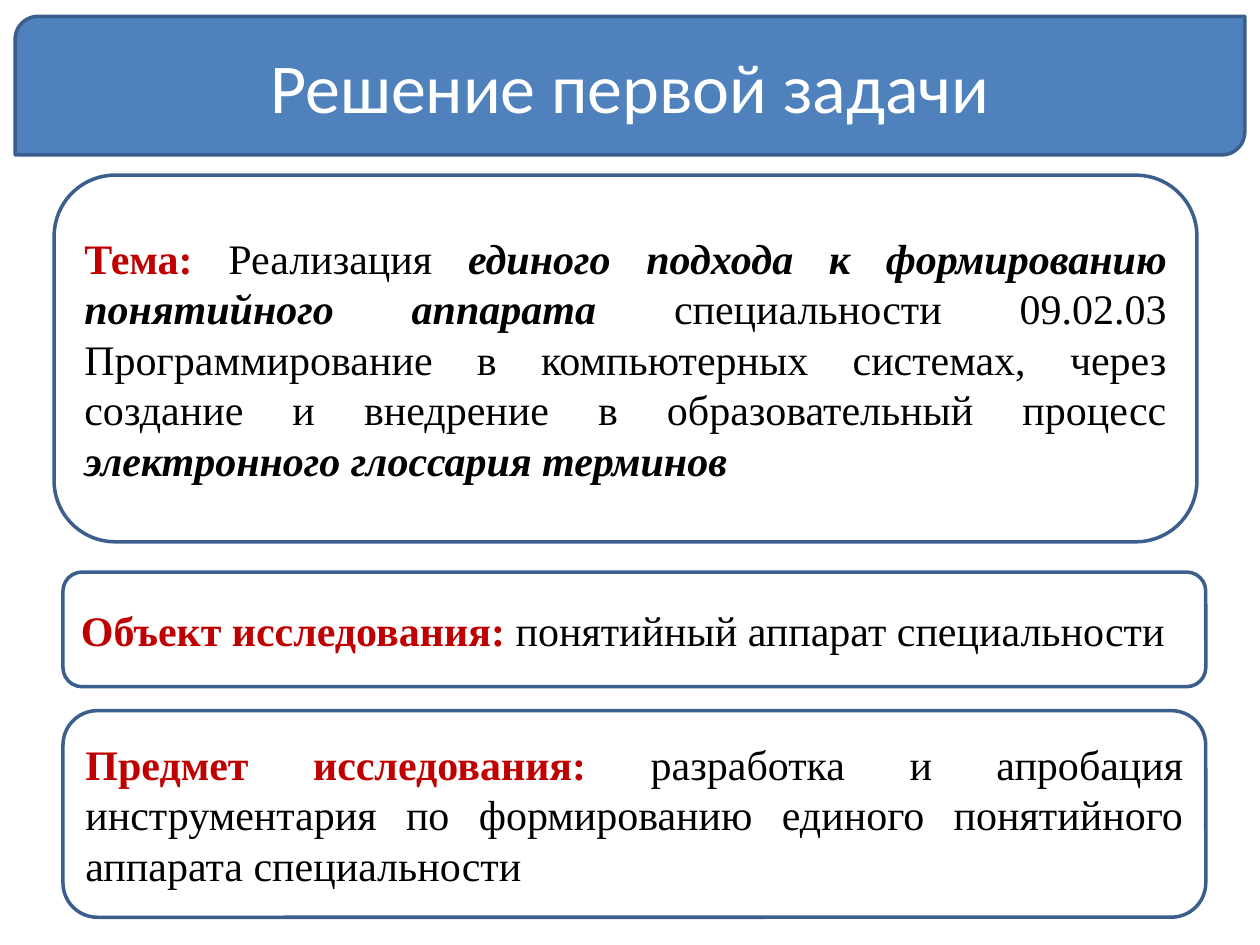
from pptx import Presentation
from pptx import util as u
from pptx.dml.color import RGBColor
from pptx.enum import shapes, text

RED, BLACK, WHITE = "C00000", "000000", "FFFFFF"
BLUE, EDGE = "4F81BD", "3A5F8C"
KIND = shapes.MSO_SHAPE


def paint(target, color):
    """Give a fill or font a solid colour."""
    if hasattr(target, "solid"):
        target.solid()
        target.fore_color.rgb = RGBColor.from_string(color)
    else:
        target.color.rgb = RGBColor.from_string(color)


def add_box(slide, kind, box, align, fill=None):
    """Add an outlined shape and return its first paragraph."""
    shape = slide.shapes.add_shape(kind, *map(u.Inches, box))
    shape.shadow.inherit = False
    if fill:
        paint(shape.fill, fill)
    else:
        shape.fill.background()
    paint(shape.line.fill, EDGE)
    shape.line.width = u.Pt(2)
    frame = shape.text_frame
    frame.word_wrap = True
    frame.vertical_anchor = text.MSO_ANCHOR.MIDDLE
    para = frame.paragraphs[0]
    para.alignment = align
    return para


def add_title(slide, box, title):
    para = add_box(slide, KIND.ROUND_2_DIAG_RECTANGLE, box,
                   text.PP_ALIGN.CENTER, BLUE)
    para.text = title
    para.font.name = "Calibri"
    para.font.size = u.Pt(40)
    paint(para.font, WHITE)


def add_card(slide, box, label, parts):
    """Add a red label, then (words, stressed) parts in black."""
    para = add_box(slide, KIND.ROUNDED_RECTANGLE, box, text.PP_ALIGN.JUSTIFY)
    para.font.name = "Times New Roman"
    para.font.size = u.Pt(24)
    runs = [(label + " ", RED, True, False)]
    runs += [(words, BLACK, strong, strong) for words, strong in parts]
    for words, color, bold, italic in runs:
        run = para.add_run()
        run.text = words
        run.font.bold = bold
        run.font.italic = italic
        paint(run.font, color)


def main():
    deck = Presentation()
    deck.slide_width, deck.slide_height = u.Inches(10), u.Inches(7.5)
    slide = deck.slides.add_slide(deck.slide_layouts[6])
    width = 9.07
    add_card(slide, (0.43, 1.39, width, 2.91), "Тема:", [
        ("Реализация ", False),
        ("единого подхода к формированию понятийного аппарата ", True),
        ("специальности 09.02.03 Программирование в компьютерных системах, "
         "через создание и внедрение в образовательный процесс ", False),
        ("электронного глоссария терминов", True),
    ])
    add_card(slide, (0.5, 4.54, width, 0.91), "Объект исследования:",
             [("понятийный аппарат специальности", False)])
    add_card(slide, (0.5, 5.64, width, 1.64), "Предмет исследования:",
             [("разработка и апробация инструментария по формированию "
               "единого понятийного аппарата специальности", False)])
    add_title(slide, (0.12, 0.13, 9.76, 1.1), "Решение первой задачи")
    deck.save("out.pptx")


if __name__ == "__main__":
    main()
